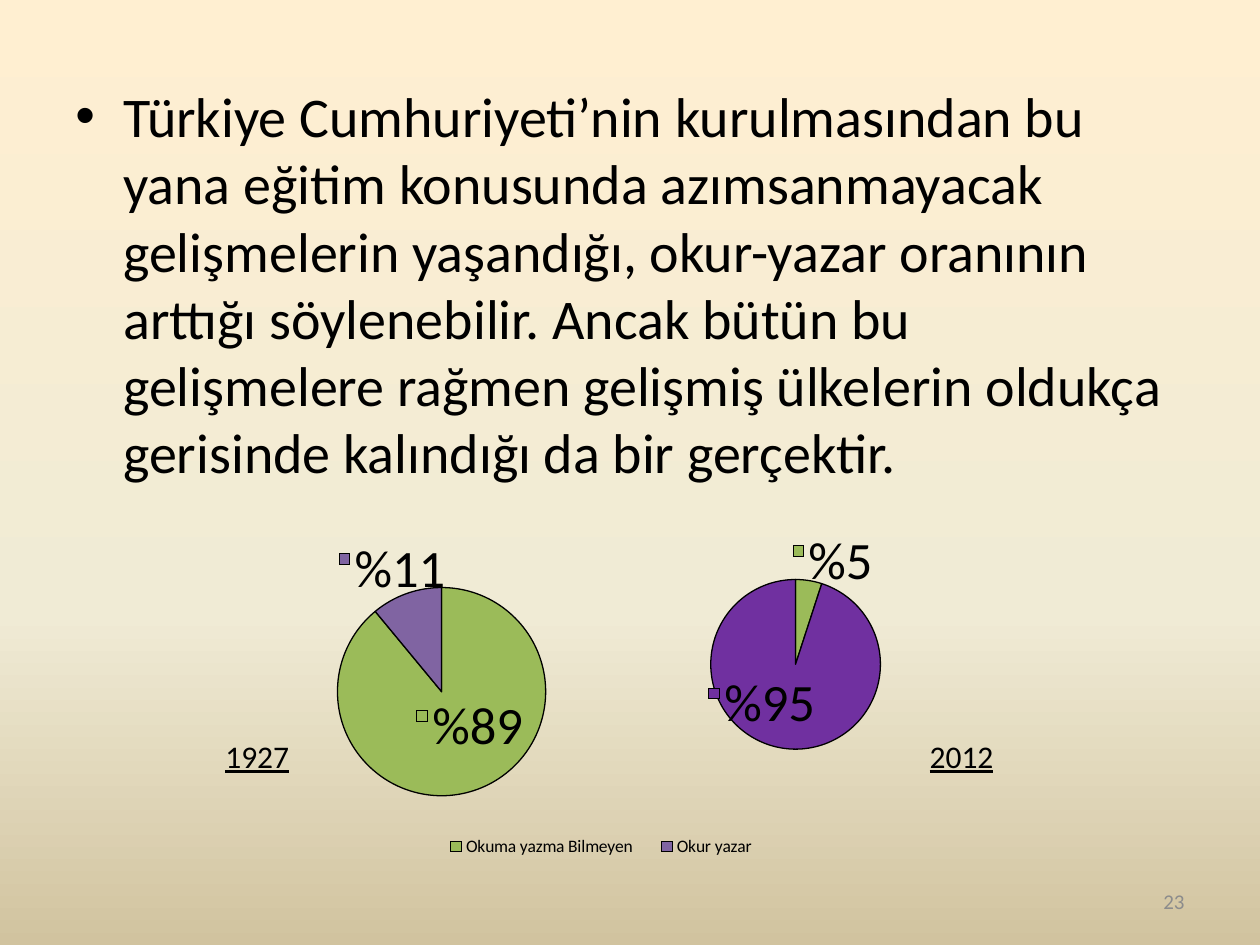
from lxml.etree import SubElement
from pptx import Presentation
from pptx.chart.data import CategoryChartData
from pptx.dml.color import RGBColor
from pptx.enum.chart import XL_CHART_TYPE, XL_LABEL_POSITION, XL_LEGEND_POSITION
from pptx.enum.text import MSO_ANCHOR, PP_ALIGN
from pptx.oxml import parse_xml
from pptx.oxml.ns import nsdecls, qn
from pptx.util import Inches, Pt

WIDTH, HEIGHT = Inches(10), Inches(7.5)
FONT = "Calibri"
CATEGORIES = ["Okuma yazma Bilmeyen", "Okur yazar"]
BACKGROUND = [(0, "FFEFD1"), (65, "F0EBD5"), (100, "D1C39F")]
SUMMARY = (
    "Türkiye Cumhuriyeti’nin kurulmasından bu yana eğitim konusunda "
    "azımsanmayacak gelişmelerin yaşandığı, okur-yazar oranının arttığı "
    "söylenebilir. Ancak bütün bu gelişmelere rağmen gelişmiş ülkelerin "
    "oldukça gerisinde kalındığı da bir gerçektir."
)


def color(hex_value):
    return RGBColor.from_string(hex_value)


def place(box):
    """Turn shares of the slide into left, top, width, height."""
    return [round(share * side) for share, side in zip(box, (WIDTH, HEIGHT) * 2)]


def set_background(slide):
    slide.background.fill.gradient()
    gradient = slide.element.find(".//" + qn("a:gradFill"))
    gradient.find(qn("a:lin")).set("ang", str(90 * 60000))
    stops = gradient.find(qn("a:gsLst"))
    for stop in list(stops):
        stops.remove(stop)
    for percent, hex_value in BACKGROUND:
        stop = SubElement(stops, qn("a:gs"), pos=str(percent * 1000))
        SubElement(stop, qn("a:srgbClr"), val=hex_value)


def add_text(slide, box, text, size, hex_value="000000", wrap=True):
    frame = slide.shapes.add_textbox(*place(box)).text_frame
    frame.word_wrap = wrap
    frame.text = text
    paragraph = frame.paragraphs[0]
    font = paragraph.runs[0].font
    font.name, font.size = FONT, Pt(size)
    font.color.rgb = color(hex_value)
    return frame, paragraph, font


def add_summary(slide, box):
    _, paragraph, _ = add_text(slide, box, SUMMARY, 32)
    paragraph.space_before = Pt(6.4)
    properties = paragraph._p.get_or_add_pPr()
    properties.set("marL", str(Inches(0.38)))
    properties.set("indent", str(-Inches(0.38)))
    SubElement(properties, qn("a:buFont"), typeface="Arial")
    SubElement(properties, qn("a:buChar"), char="•")


def add_year(slide, box, year):
    _, _, font = add_text(slide, box, year, 18, wrap=False)
    font.underline = True


def add_page_number(slide, box, number):
    frame, paragraph, _ = add_text(slide, box, number, 12, "8C8C8C")
    frame.vertical_anchor = MSO_ANCHOR.MIDDLE
    paragraph.alignment = PP_ALIGN.RIGHT


def set_layout(parent, index, values, fixed=True):
    """Give a chart part a manual layout in shares of its chart."""
    for old in parent.findall(qn("c:layout")):
        parent.remove(old)
    settings = []
    if fixed:
        if parent.tag == qn("c:plotArea"):
            settings.append(("layoutTarget", "inner"))
        settings += [("xMode", "edge"), ("yMode", "edge")]
    settings += zip("xywh", values)
    layout = parse_xml(f"<c:layout {nsdecls('c')}><c:manualLayout/></c:layout>")
    for tag, value in settings:
        SubElement(layout[0], qn("c:" + tag), val=str(value))
    parent.insert(index, layout)


def add_literacy_pie(slide, box, name, values, fills, plot_box, offsets, legend_box=None):
    data = CategoryChartData()
    data.categories = CATEGORIES
    data.add_series(name, values)
    chart = slide.shapes.add_chart(XL_CHART_TYPE.PIE, *place(box), data).chart
    chart.has_title = False
    chart.font.name, chart.font.size = FONT, Pt(10)
    chart.font.color.rgb = color("000000")
    plot_area = chart._chartSpace.find(".//" + qn("c:plotArea"))
    set_layout(plot_area, 0, plot_box)

    # Slices and their percentages
    chart.plots[0].vary_by_categories = True
    series = chart.plots[0].series[0]
    for index, (value, fill) in enumerate(zip(values, fills)):
        point = series.points[index]
        point.format.fill.solid()
        point.format.fill.fore_color.rgb = color(fill)
        point.format.line.color.rgb = color("000000")
        point.format.line.width = Pt(0.75)
        label = point.data_label
        label.text_frame.text = f"%{value}"
        label.text_frame.word_wrap = False
        font = label.text_frame.paragraphs[0].runs[0].font
        font.name, font.size = FONT, Pt(30)
        font.color.rgb = color("000000")
        # Labels outside the pie have room for a single line
        label.position = XL_LABEL_POSITION.OUTSIDE_END
    for label, offset in zip(series._element.iter(qn("c:dLbl")), offsets):
        set_layout(label, 1, offset, fixed=False)
        label.find(qn("c:showLegendKey")).set("val", "1")
    for leader in series._element.iter(qn("c:showLeaderLines")):
        leader.set("val", "0")

    # Legend
    chart.has_legend = legend_box is not None
    if legend_box:
        chart.legend.position = XL_LEGEND_POSITION.BOTTOM
        chart.legend.include_in_layout = True
        set_layout(chart.legend._element, 1, legend_box)


def main():
    deck = Presentation()
    deck.slide_width, deck.slide_height = WIDTH, HEIGHT
    slide = deck.slides.add_slide(deck.slide_layouts[6])
    set_background(slide)
    add_summary(slide, (0.05, 0.08, 0.9, 0.84))
    add_literacy_pie(
        slide, (0.075, 0.532, 0.551, 0.4), "Series 1", (89, 11),
        ("9BBB59", "8064A2"), (0.35, 0.22, 0.3, 0.56),
        ((-0.09, -0.27), (0.06, 0.04)), (0.48, 0.88, 0.5, 0.06))
    add_literacy_pie(
        slide, (0.398, 0.521, 0.449, 0.368), "", (5, 95),
        ("9BBB59", "7030A0"), (0.37, 0.25, 0.3, 0.49),
        ((-0.03, 0.06), (0.06, -0.24)))
    add_year(slide, (0.169, 0.773, 0.071, 0.053), "1927")
    add_year(slide, (0.728, 0.773, 0.072, 0.053), "2012")
    add_page_number(slide, (0.717, 0.927, 0.233, 0.053), "23")
    deck.save("out.pptx")


if __name__ == "__main__":
    main()
